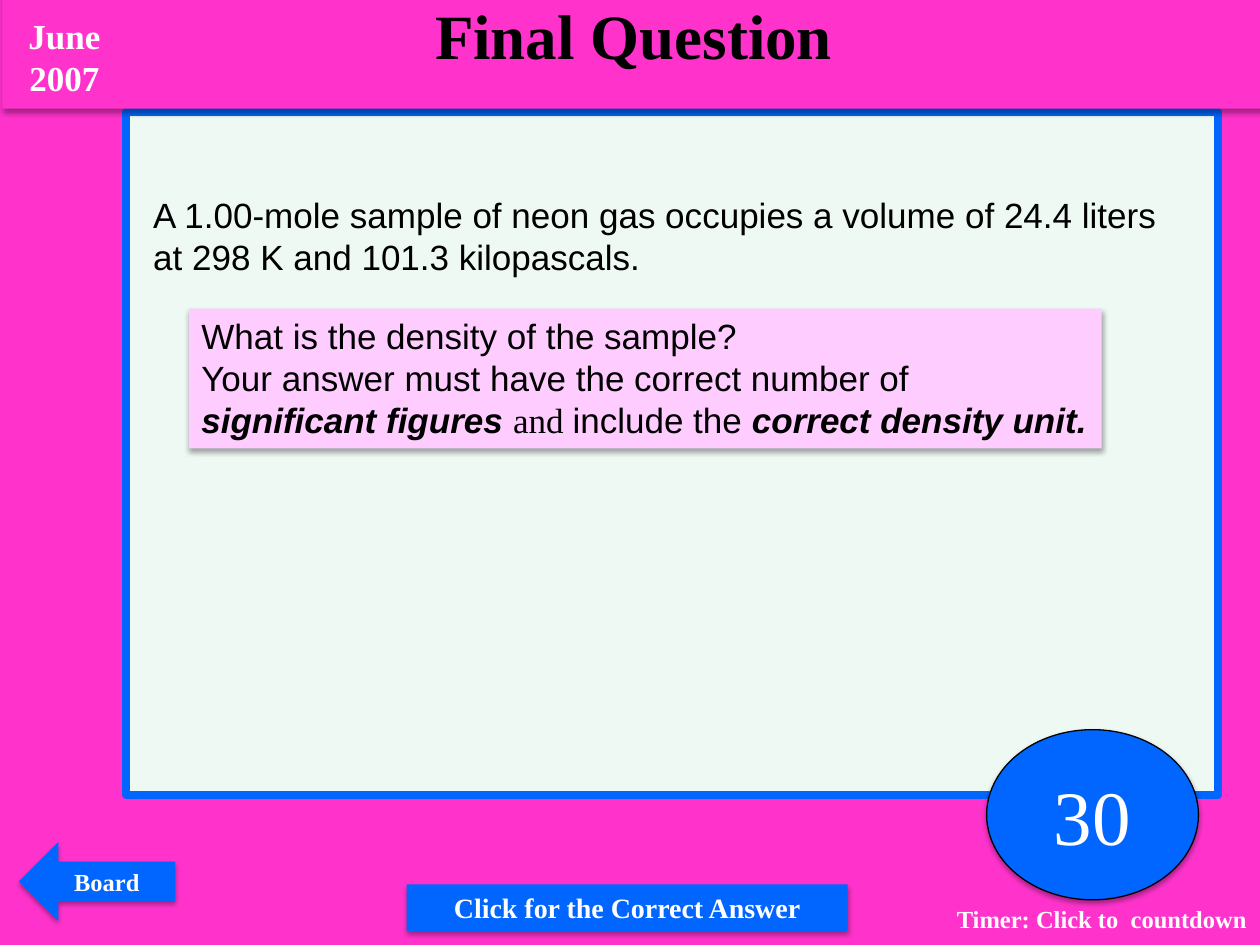
from lxml import etree
from pptx import Presentation
from pptx.dml.color import RGBColor
from pptx.enum.shapes import MSO_SHAPE
from pptx.enum.text import MSO_ANCHOR, PP_ALIGN
from pptx.oxml.ns import qn
from pptx.util import Cm, Pt

PINK = RGBColor(0xFF, 0x33, 0xCC)
PALE_PINK = RGBColor(0xFF, 0xCC, 0xFF)
MINT = RGBColor(0xEE, 0xF9, 0xF4)
BLUE = RGBColor(0x00, 0x66, 0xFF)
BLACK = RGBColor(0x00, 0x00, 0x00)
WHITE = RGBColor(0xFF, 0xFF, 0xFF)

SERIF = "Times New Roman"
SANS = "Arial"

RECTANGLE = MSO_SHAPE.RECTANGLE
ELLIPSE = MSO_SHAPE.OVAL
LEFT_ARROW = MSO_SHAPE.LEFT_ARROW
TOP = MSO_ANCHOR.TOP
MIDDLE = MSO_ANCHOR.MIDDLE
LEFT = PP_ALIGN.LEFT
CENTER = PP_ALIGN.CENTER


def add_soft_shadow(shape):
    """Give the shape a soft shadow that falls straight down."""
    effects = shape._element.spPr.find(qn("a:effectLst"))
    shadow = etree.SubElement(effects, qn("a:outerShdw"), blurRad=str(Pt(3.1)),
                              dist=str(Pt(1.8)), dir="5400000", rotWithShape="0")
    color = etree.SubElement(shadow, qn("a:srgbClr"), val=str(BLACK))
    etree.SubElement(color, qn("a:alpha"), val="35000")


def add_box(page, kind, box, fill, line=None, line_width=0, shadow=True):
    """Add a filled preset shape in the box given in centimetres."""
    shape = page.shapes.add_shape(kind, *map(Cm, box))
    shape.shadow.inherit = False
    shape.fill.solid()
    shape.fill.fore_color.rgb = fill
    if line is None:
        shape.line.fill.background()
    else:
        shape.line.color.rgb = line
        shape.line.width = Pt(line_width)
    if shadow:
        add_soft_shadow(shape)
    return shape


def write(shape, lines, size, color, font=SERIF, bold=False, align=CENTER,
          anchor=TOP, wrap=True):
    """Write lines of (text, overrides) spans into the shape."""
    frame = shape.text_frame
    frame.word_wrap = wrap
    frame.vertical_anchor = anchor
    for index, spans in enumerate(lines):
        para = frame.add_paragraph() if index else frame.paragraphs[0]
        para.alignment = align
        for text, overrides in spans:
            span = para.add_run()
            span.text = text
            span.font.size = Pt(size)
            span.font.color.rgb = color
            span.font.name = overrides.get("font", font)
            span.font.bold = overrides.get("bold", bold)
            span.font.italic = overrides.get("italic", False)


def add_label(page, box, text, size, color, **style):
    """Add a plain text box in the box given in centimetres."""
    label = page.shapes.add_textbox(*map(Cm, box))
    write(label, [[(text, {})]], size, color, **style)


def add_banner(page, box):
    """Add the title banner with the exam date at its left end."""
    left, top, width, height = box
    banner = add_box(page, RECTANGLE, box, PINK)
    write(banner, [[("Final Question", {})]], 36, BLACK, bold=True)
    add_label(page, (left + 0.05, top + 0.36, 2.4, 1.96), "June 2007", 20, WHITE, bold=True)


def add_question(page, box):
    """Add the framed panel with the facts and the highlighted question."""
    left, top, width, height = box
    add_box(page, RECTANGLE, box, MINT, BLUE, 4.5, shadow=False)
    facts = ("A 1.00-mole sample of neon gas occupies a volume of 24.4 liters "
             "at 298 K and 101.3 kilopascals.")
    add_label(page, (left + 0.3, top + 1.52, width - 0.68, 1.96), facts, 20, BLACK,
              font=SANS, align=LEFT)
    strong = {"bold": True, "italic": True}
    lines = [
        [("What is the density of the sample?", {})],
        [("Your answer must have the correct number of ", {}),
         ("significant figures ", strong),
         ("and ", {"font": SERIF}),
         ("include the ", {}),
         ("correct density unit.", strong)],
    ]
    task = add_box(page, RECTANGLE, (left + 1.27, top + 3.96, 18.4, 2.82), PALE_PINK)
    write(task, lines, 20, BLACK, font=SANS, align=LEFT)


def add_controls(page, box):
    """Add the board arrow, the answer button and the countdown timer."""
    left, top, width, height = box
    arrow = add_box(page, LEFT_ARROW, (left + 0.38, top + 2.26, 3.15, 1.6), BLUE)
    write(arrow, [[("Board", {})]], 14, WHITE, bold=True, anchor=MIDDLE, wrap=False)
    button = add_box(page, RECTANGLE, (left + 8.2, top + 3.12, 8.89, 0.94), BLUE)
    write(button, [[("Click for the Correct Answer", {})]], 16, WHITE, bold=True)
    timer = add_box(page, ELLIPSE, (left + 19.89, top, 4.27, 3.43), BLUE, BLACK, 0.75)
    write(timer, [[("30", {})]], 44, WHITE, anchor=MIDDLE, wrap=False)
    add_label(page, (left + 18.9, top + 3.38, 6.63, 0.86), "Timer: Click to  countdown",
              14, WHITE, bold=True)


def main():
    """Build the quiz slide and save it."""
    deck = Presentation()
    deck.slide_width, deck.slide_height = Cm(25.4), Cm(19.05)
    page = deck.slides.add_slide(deck.slide_layouts[6])
    page.background.fill.solid()
    page.background.fill.fore_color.rgb = PINK
    add_question(page, (2.54, 2.26, 22.02, 13.77))
    add_banner(page, (0.05, -0.2, 25.45, 2.39))
    add_controls(page, (0, 14.71, 25.4, 4.34))
    deck.save("out.pptx")


if __name__ == "__main__":
    main()
